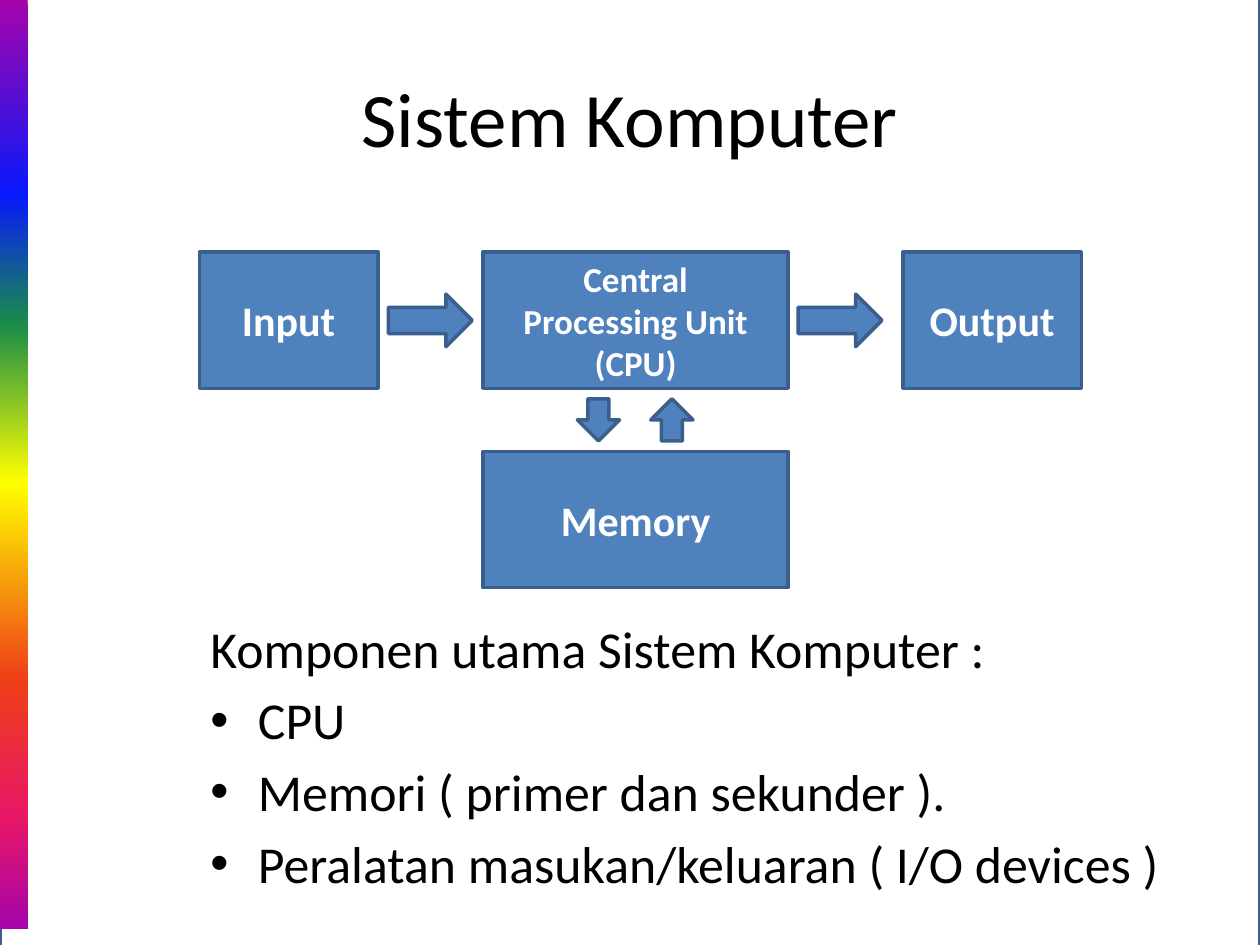
"""Build the computer system block diagram slide."""
from dataclasses import dataclass
from typing import Sequence

from lxml.etree import SubElement
from pptx import Presentation
from pptx.dml.color import RGBColor
from pptx.enum.shapes import MSO_SHAPE as Geom
from pptx.enum.text import MSO_ANCHOR as Anchor, PP_ALIGN as Align
from pptx.oxml import parse_xml
from pptx.oxml.ns import nsdecls, qn
from pptx.util import Cm, Pt

BLUE = RGBColor(0x4F, 0x81, 0xBD)
EDGE = RGBColor(0x3A, 0x5F, 0x8C)
WHITE = RGBColor(0xFF, 0xFF, 0xFF)
BLACK = RGBColor(0x00, 0x00, 0x00)
RAINBOW = (
    (0, "A603AB"), (21, "0819FB"), (35, "1A8D48"), (52, "FFFF00"),
    (73, "EE3F17"), (88, "E81766"), (100, "A603AB"),
)
INPUT_X, CPU_X, OUTPUT_X = 4.02, 9.74, 18.2
TOP_Y, MEMORY_Y = 5.08, 9.1
SIDE_W, CENTRE_W, BLOCK_H = 3.6, 6.15, 2.75
FLOW_Y, FLOW_W, FLOW_H = 5.93, 1.69, 1.06
BUS_Y, BUS_SIZE = 8.04, 0.85


@dataclass(frozen=True)
class Block:
    x: float
    y: float
    w: float
    lines: Sequence[str]
    size: float = 24


@dataclass(frozen=True)
class Arrow:
    geom: Geom
    x: float
    y: float
    w: float
    h: float


BLOCKS = (
    Block(INPUT_X, TOP_Y, SIDE_W, ("Input",)),
    Block(CPU_X, TOP_Y, CENTRE_W, ("Central", "Processing Unit", "(CPU)"), 20),
    Block(OUTPUT_X, TOP_Y, SIDE_W, ("Output",)),
    Block(CPU_X, MEMORY_Y, CENTRE_W, ("Memory",)),
)
ARROWS = (
    Arrow(Geom.RIGHT_ARROW, 7.83, FLOW_Y, FLOW_W, FLOW_H),
    Arrow(Geom.RIGHT_ARROW, 16.09, FLOW_Y, FLOW_W, FLOW_H),
    Arrow(Geom.UP_ARROW, 13.12, BUS_Y, BUS_SIZE, BUS_SIZE),
    Arrow(Geom.DOWN_ARROW, 11.64, BUS_Y, BUS_SIZE, BUS_SIZE),
)
COMPONENTS = (
    "Komponen utama Sistem Komputer :",
    "CPU",
    "Memori ( primer dan sekunder ).",
    "Peralatan masukan/keluaran ( I/O devices )",
)


def add_solid(s, geom: Geom, x: float, y: float, w: float, h: float,
              fill: RGBColor = BLUE):
    sp = s.shapes.add_shape(geom, Cm(x), Cm(y), Cm(w), Cm(h))
    sp.shadow.inherit = False
    sp.fill.solid()
    sp.fill.fore_color.rgb = fill
    sp.line.color.rgb = EDGE
    sp.line.width = Pt(2)
    return sp


def add_frame(s) -> None:
    sp = add_solid(s, Geom.RECTANGLE, 0, -0.28, 25.4, 19.81, WHITE)
    color = sp.fill._xPr.find(qn("a:solidFill"))[0]
    SubElement(color, qn("a:alpha"), val="96000")


def add_rainbow(s) -> None:
    sp = add_solid(s, Geom.RECTANGLE, 0, 0, 0.56, 18.72)
    sp.line.fill.background()
    stops = "".join(
        f'<a:gs pos="{pos * 1000}"><a:srgbClr val="{color}"/></a:gs>'
        for pos, color in RAINBOW
    )
    gradient = parse_xml(
        f'<a:gradFill {nsdecls("a")}><a:gsLst>{stops}</a:gsLst>'
        '<a:lin ang="5400000" scaled="0"/></a:gradFill>'
    )
    solid = sp.fill._xPr.find(qn("a:solidFill"))
    solid.getparent().replace(solid, gradient)


def format_font(font, size: float, color: RGBColor, bold: bool = False) -> None:
    for name, value in {"name": "Calibri", "size": Pt(size), "bold": bold}.items():
        setattr(font, name, value)
    font.color.rgb = color


def write_lines(tf, lines: Sequence[str], size: float, color: RGBColor,
                bold: bool = False, align: Align = Align.CENTER) -> None:
    tf.word_wrap = True
    for i, text in enumerate(lines):
        p = tf.add_paragraph() if i else tf.paragraphs[0]
        p.alignment = align
        r = p.add_run()
        r.text = text
        format_font(r.font, size, color, bold)


def add_block(s, block: Block) -> None:
    sp = add_solid(s, Geom.RECTANGLE, block.x, block.y, block.w, BLOCK_H)
    sp.text_frame.vertical_anchor = Anchor.MIDDLE
    write_lines(sp.text_frame, block.lines, block.size, WHITE, bold=True)


def add_title(s) -> None:
    tf = s.shapes.add_textbox(Cm(1.27), Cm(0.76), Cm(22.86), Cm(3.18)).text_frame
    tf.vertical_anchor = Anchor.MIDDLE
    write_lines(tf, ("Sistem Komputer",), 44, BLACK)


def add_components(s) -> None:
    tf = s.shapes.add_textbox(Cm(3.99), Cm(12.3), Cm(20.83), Cm(5.93)).text_frame
    write_lines(tf, COMPONENTS, 29.6, BLACK, align=Align.LEFT)
    indent = Cm(0.96)
    for i, p in enumerate(tf.paragraphs):
        pPr = p._p.get_or_add_pPr()
        pPr.set("marL", str(indent))
        pPr.set("indent", str(-indent))
        if i:
            p.space_before = Pt(5.5)
            SubElement(pPr, qn("a:buFont"), typeface="Arial")
            SubElement(pPr, qn("a:buChar"), char="•")


def main() -> None:
    prs = Presentation()
    prs.slide_width, prs.slide_height = Cm(25.4), Cm(19.05)
    s = prs.slides.add_slide(prs.slide_layouts[6])
    add_frame(s)
    add_rainbow(s)
    add_title(s)
    for block in BLOCKS:
        add_block(s, block)
    add_components(s)
    for arrow in ARROWS:
        add_solid(s, arrow.geom, arrow.x, arrow.y, arrow.w, arrow.h)
    prs.save("out.pptx")


if __name__ == "__main__":
    main()
